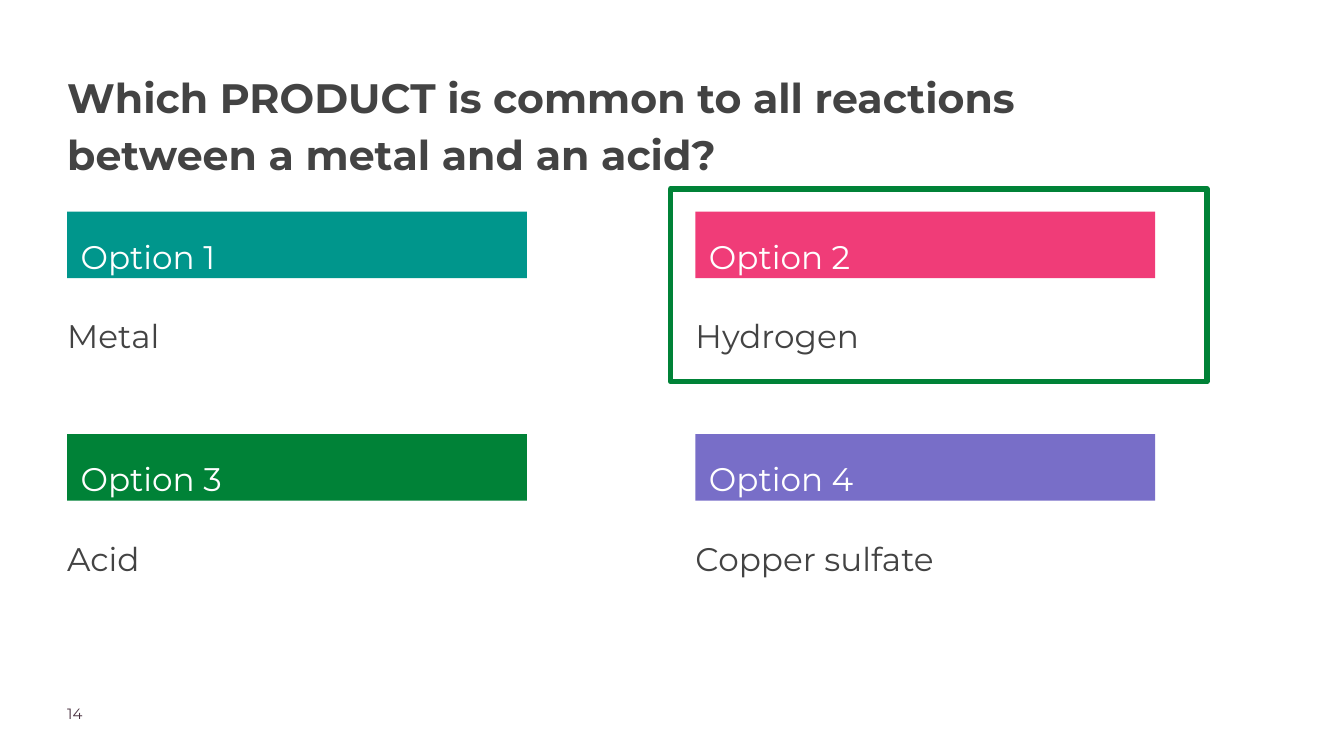
import pptx
import pptx.util
import pptx.dml.color
import pptx.enum.shapes
import pptx.enum.text
from lxml import etree

Inches, Pt = pptx.util.Inches, pptx.util.Pt
RECT = pptx.enum.shapes.MSO_SHAPE.RECTANGLE

COLORS = {
    "teal": "00968C", "pink": "F03C78", "green": "008237", "violet": "786EC8",
    "text": "434343", "number": "4B3241", "white": "FFFFFF",
}
QUESTION = "Which PRODUCT is common to all reactions between a metal and an acid?"
PAGE_NUMBER = "14"
OPTIONS = [
    ("Option 1", "Metal", "teal"),
    ("Option 2", "Hydrogen", "pink"),
    ("Option 3", "Acid", "green"),
    ("Option 4", "Copper sulfate", "violet"),
]
STYLES = {
    "title": {"size": Pt(44), "bold": True, "color": "text", "line_spacing": 1.15},
    "label": {"size": Pt(35), "color": "white", "line_spacing": 1.3, "inset": 0.2},
    "answer": {"size": Pt(35), "color": "text", "line_spacing": 1.3, "space_after": Pt(20)},
    "number": {"size": Pt(16), "color": "number"},
}
LEFT, TOP, COL_STEP, ROW_STEP = 1, 3.15, 9.35, 3.31
ANSWER_OFFSET = 1.38


def rgb(name):
    return pptx.dml.color.RGBColor.from_string(COLORS[name])


def add_rect(slide, box, fill=None, line=None, width=6):
    s = slide.shapes.add_shape(RECT, *map(Inches, box))
    s.shadow.inherit = False
    if fill:
        s.fill.solid()
        s.fill.fore_color.rgb = rgb(fill)
    else:
        s.fill.background()
    if line:
        s.line.color.rgb = rgb(line)
        s.line.width = Pt(width)
        etree.SubElement(s.line._get_or_add_ln(), pptx.oxml.ns.qn("a:round"))
    else:
        s.line.fill.background()
    return s


def write(s, text, style):
    tf = s.text_frame
    tf.word_wrap = True
    tf.vertical_anchor = pptx.enum.text.MSO_ANCHOR.TOP
    for side in ("left", "top", "right", "bottom"):
        setattr(tf, f"margin_{side}", Inches(style.get("inset", 0)))
    p = tf.paragraphs[0]
    p.alignment = pptx.enum.text.PP_ALIGN.LEFT
    for name in ("line_spacing", "space_after"):
        if name in style:
            setattr(p, name, style[name])
    r = p.add_run()
    r.text = text
    r.font.name = "Montserrat"
    r.font.size = style["size"]
    r.font.bold = style.get("bold", False)
    r.font.color.rgb = rgb(style["color"])


def add_text(slide, box, text, style):
    write(slide.shapes.add_textbox(*map(Inches, box)), text, STYLES[style])


def main():
    prs = pptx.Presentation()
    prs.slide_width, prs.slide_height = Inches(20), Inches(11.25)
    slide = prs.slides.add_slide(prs.slide_layouts[6])

    for i, (label, answer, color) in enumerate(OPTIONS):
        row, col = divmod(i, 2)
        x, y = LEFT + col * COL_STEP, TOP + row * ROW_STEP
        write(add_rect(slide, (x, y, 6.84, 0.99), fill=color), label, STYLES["label"])
        add_text(slide, (x, y + ANSWER_OFFSET, 8.64, 1.38), answer, "answer")

    add_text(slide, (LEFT, 10.48, 1.57, 0.39), PAGE_NUMBER, "number")
    add_text(slide, (LEFT, 0.97, 14.44, 1.78), QUESTION, "title")
    add_rect(slide, (9.98, 2.81, 7.98, 2.87), line="green")  # correct answer
    prs.save("out.pptx")


if __name__ == "__main__":
    main()
